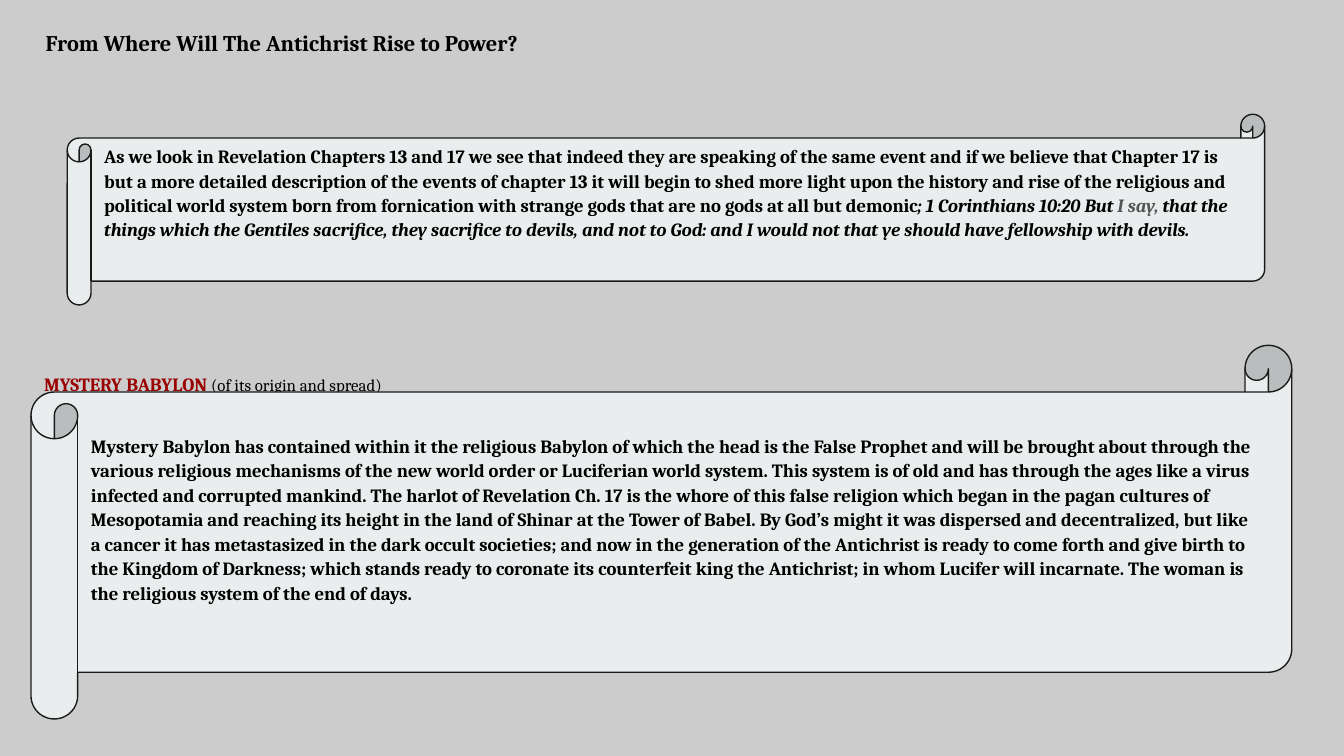
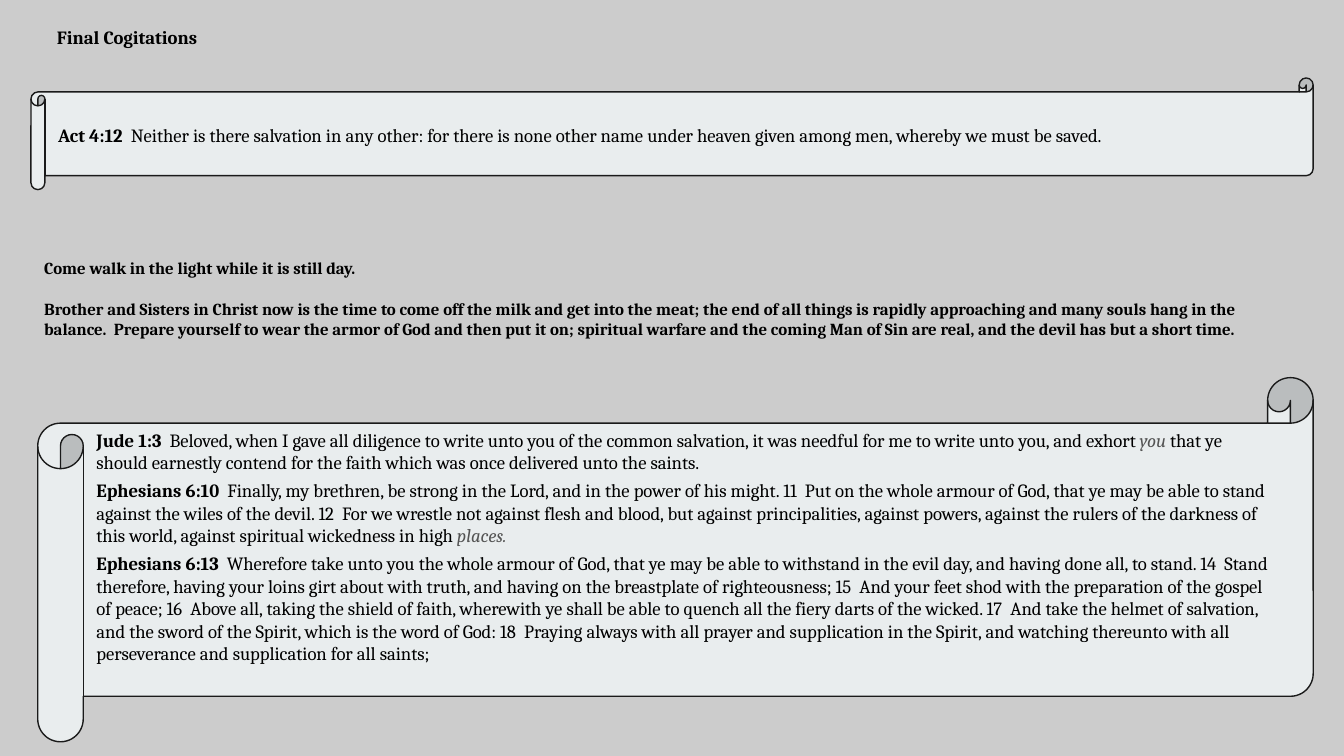
"""Build two slides of scripture scrolls on a grey background."""
import pptx
import pptx.dml.color
import pptx.enum.shapes
import pptx.enum.text
import pptx.util

Pt = pptx.util.Pt
ALIGN = pptx.enum.text.PP_ALIGN
FONT = "Cambria"
GREY, PARCHMENT, OUTLINE = "CCCCCC", "E9EDEE", "1A1A1A"
BLACK, RED, ADDED_WORD = "000000", "990000", "545454"
INSET = 7.2
LOOSE = 1.09

REVELATION = (
    "As we look in Revelation Chapters 13 and 17 we see that indeed they are speaking of the "
    "same event and if we believe that Chapter 17 is but a more detailed description of the "
    "events of chapter 13 it will begin to shed more light upon the history and rise of the "
    "religious and political world system born from fornication with strange gods that are no "
    "gods at all but demonic")
SACRIFICE = (
    " that the things which the Gentiles sacrifice, they sacrifice to devils, and not to God: "
    "and I would not that ye should have fellowship with devils.")
BABYLON_ORIGIN = (
    "Mystery Babylon has contained within it the religious Babylon of which the head is the "
    "False Prophet and will be brought about through the various religious mechanisms of the "
    "new world order or Luciferian world system. This system is of old and has through the ages "
    "like a virus infected and corrupted mankind. The harlot of Revelation Ch. 17 is the whore "
    "of this false religion which began in the pagan cultures of Mesopotamia and reaching its "
    "height in the land of Shinar at the Tower of Babel. ")
BABYLON_SPREAD = (
    "By God’s might it was dispersed and "
    "decentralized, but like a cancer it has metastasized in the dark occult societies; and now "
    "in the generation of the Antichrist is ready to come forth and give birth to the Kingdom of "
    "Darkness; which stands ready to coronate its counterfeit king the Antichrist; in whom "
    "Lucifer will incarnate. The woman is the religious system of the end of days.")
ACTS = (
    "Neither is there salvation in any other: for there is none other name under heaven given "
    "among men, whereby we must be saved.")
BRETHREN = (
    "Brother and Sisters in Christ now is the time to come off the milk and get into the meat; "
    "the end of all things is rapidly approaching and many souls hang in the balance.  Prepare "
    "yourself to wear the armor of God and then put it on; spiritual warfare and the coming Man "
    "of Sin are real, and the devil has but a short time.")
JUDE = (
    "  Beloved, when I gave all diligence to write unto you of the common salvation, it was "
    "needful for me to write unto you, and exhort ")
JUDE_END = (
    " that ye should earnestly contend for the faith which was once delivered unto the saints.")
ARMOUR = (
    "  Finally, my brethren, be strong in the Lord, and in the power of his might. 11  Put on "
    "the whole armour of God, that ye may be able to stand against the wiles of the devil. 12  "
    "For we wrestle not against flesh and blood, but against principalities, against powers, "
    "against the rulers of the darkness of this world, against spiritual wickedness in high ")
STAND = (
    "  Wherefore take unto you the whole armour of God, that ye may be able to withstand in the "
    "evil day, and having done all, to stand. 14  Stand therefore, having your loins girt about "
    "with truth, and having on the breastplate of righteousness; 15  And your feet shod with the "
    "preparation of the gospel of peace; 16  Above all, taking the shield of faith, wherewith ye "
    "shall be able to quench all the fiery darts of the wicked. 17  And take the helmet of "
    "salvation, and the sword of the Spirit, which is the word of God: 18  Praying always with "
    "all prayer and supplication in the Spirit, and watching thereunto with all perseverance and "
    "supplication for all saints;")


def rgb(value):
    """Turn a hex string into a colour."""
    return pptx.dml.color.RGBColor.from_string(value)


def add_run(paragraph, text, size=10, bold=False, italic=False, color=BLACK):
    """Append formatted text to a paragraph."""
    run = paragraph.add_run()
    run.text = text
    run.font.name = FONT
    run.font.size = Pt(size)
    run.font.bold = bold
    run.font.italic = italic
    run.font.color.rgb = rgb(color)


def prepare_frame(shape, top=INSET):
    """Give a text frame wrapping, top anchoring and insets."""
    frame = shape.text_frame
    frame.word_wrap = True
    frame.auto_size = pptx.enum.text.MSO_AUTO_SIZE.NONE
    frame.vertical_anchor = pptx.enum.text.MSO_ANCHOR.TOP
    frame.margin_left = frame.margin_right = frame.margin_bottom = Pt(INSET)
    frame.margin_top = Pt(top)
    return frame


def fill_frame(frame, verses, align=ALIGN.LEFT, spacing=1.0, gap=0):
    """Write one paragraph per verse, each a list of text and format pairs."""
    for index, verse in enumerate(verses):
        paragraph = frame.add_paragraph() if index else frame.paragraphs[0]
        paragraph.alignment = align
        paragraph.line_spacing = spacing
        paragraph.space_before = Pt(gap if index else 0)
        for text, style in verse:
            add_run(paragraph, text, **style)


def add_titled_slide(prs, title, box, size, **layout):
    """Add a title-only slide and place its title."""
    slide = prs.slides.add_slide(prs.slide_layouts[5])
    heading = slide.shapes.title
    heading.left, heading.top, heading.width, heading.height = map(Pt, box)
    fill_frame(prepare_frame(heading), [[(title, dict(size=size, bold=True))]], **layout)
    return slide


def add_note(slide, box, verses, top=INSET, **layout):
    """Add plain text straight on the background."""
    note = slide.shapes.add_textbox(*map(Pt, box))
    fill_frame(prepare_frame(note, top), verses, **layout)


def add_scroll(slide, box, verses, top, **layout):
    """Add a parchment scroll with its verses."""
    scroll = slide.shapes.add_shape(
        pptx.enum.shapes.MSO_SHAPE.HORIZONTAL_SCROLL, *map(Pt, box))
    scroll.shadow.inherit = False
    scroll.fill.solid()
    scroll.fill.fore_color.rgb = rgb(PARCHMENT)
    scroll.line.color.rgb = rgb(OUTLINE)
    scroll.line.width = Pt(0.75)
    fill_frame(prepare_frame(scroll, top), verses, **layout)


def build_antichrist_slide(prs):
    """Build the slide on the rise of the Antichrist."""
    slide = add_titled_slide(prs, "From Where Will The Antichrist Rise to Power?",
                             (17.3, 7.2, 313.2, 33.1), 12, spacing=LOOSE)
    bold = dict(bold=True)
    quote = dict(bold=True, italic=True)
    add_note(slide, (16.6, 53.3, 679.7, 316.1), [[
        ("MYSTERY BABYLON ", dict(bold=True, color=RED)),
        ("(of its origin and spread)", dict(size=9))]], top=145.3, spacing=LOOSE)
    add_scroll(slide, (36, 61.2, 641.5, 102.2), [[
        (REVELATION, bold),
        ("; 1 Corinthians 10:20 But ", quote),
        ("I say,", dict(quote, color=ADDED_WORD)),
        (SACRIFICE, quote)]], top=2.6, spacing=LOOSE)
    add_scroll(slide, (16.6, 185, 675.4, 200.2),
               [[(BABYLON_ORIGIN, bold), (BABYLON_SPREAD, bold)]],
               top=21.8, spacing=LOOSE)


def build_cogitations_slide(prs):
    """Build the closing slide of exhortations."""
    slide = add_titled_slide(prs, "Final Cogitations", (10.1, 6.5, 115.9, 25.2), 10,
                             align=ALIGN.CENTER)
    bold = dict(bold=True)
    added = dict(italic=True, color=ADDED_WORD)
    call = dict(size=9, bold=True)
    add_scroll(slide, (16.6, 41.8, 686.9, 59.8),
               [[("Act 4:12  ", bold), (ACTS, {})]], top=17.1)
    add_note(slide, (16.6, 131, 686.9, 77), [
        [("Come walk in the light while it is still day.", call)],
        [(BRETHREN, call)]], gap=10.8)
    add_scroll(slide, (20.2, 202.3, 683.3, 195.1), [
        [("Jude 1:3", bold), (JUDE, {}), ("you", added), (JUDE_END, {})],
        [("Ephesians 6:10", bold), (ARMOUR, {}), ("places.", added)],
        [("Ephesians 6:13", bold), (STAND, {})]], top=3, gap=3)


def main():
    """Build and save the presentation."""
    prs = pptx.Presentation()
    prs.slide_width, prs.slide_height = Pt(720), Pt(405)
    background = prs.slide_master.background.fill
    background.solid()
    background.fore_color.rgb = rgb(GREY)
    build_antichrist_slide(prs)
    build_cogitations_slide(prs)
    prs.save("out.pptx")


if __name__ == "__main__":
    main()
